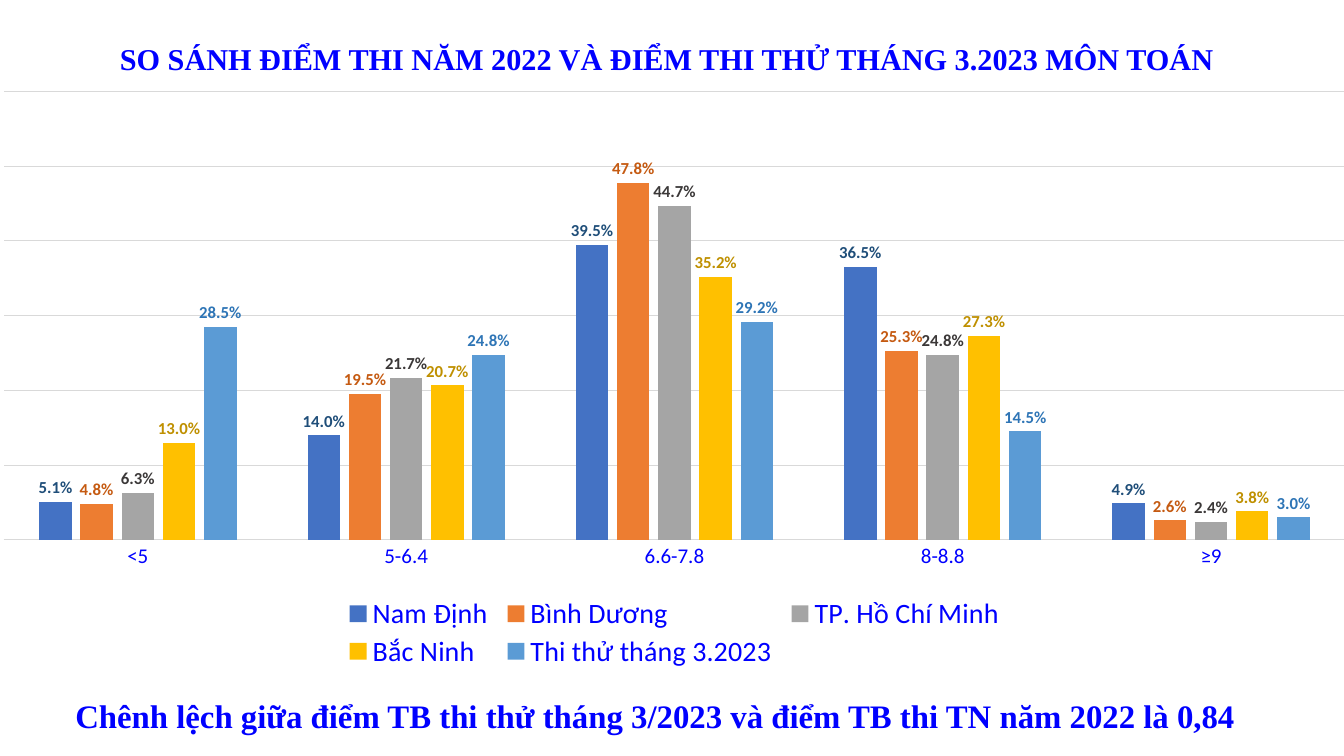
from lxml import etree
from pptx import Presentation
from pptx.chart.data import CategoryChartData
from pptx.dml.color import RGBColor
from pptx.enum.chart import XL_CHART_TYPE, XL_LABEL_POSITION, XL_LEGEND_POSITION, XL_TICK_MARK
from pptx.enum.text import MSO_ANCHOR, PP_ALIGN
from pptx.oxml.ns import qn
from pptx.util import Inches, Pt

COLUMNS = XL_CHART_TYPE.COLUMN_CLUSTERED
OUTSIDE_END = XL_LABEL_POSITION.OUTSIDE_END
BOTTOM = XL_LEGEND_POSITION.BOTTOM
NO_TICK = XL_TICK_MARK.NONE
MIDDLE = MSO_ANCHOR.MIDDLE
CENTER = PP_ALIGN.CENTER

COLORS = {"text": "0000FF", "grid": "D9D9D9", "base": "000000"}
PERCENT = "0.0%"
SCORE_BANDS = ["<5", "5-6.4", "6.6-7.8", "8-8.8", "≥9"]
# name, values, bar colour, label colour
SCORES = [
    ("Nam Định", [0.051, 0.14, 0.395, 0.365, 0.049], "4472C4", "1F4E79"),
    ("Bình Dương", [0.048, 0.195, 0.478, 0.253, 0.026], "ED7D31", "C55A11"),
    ("TP. Hồ Chí Minh", [0.063, 0.217, 0.447, 0.248, 0.024], "A5A5A5", "3B3838"),
    ("Bắc Ninh", [0.13, 0.207, 0.352, 0.273, 0.038], "FFC000", "BF9000"),
    ("Thi thử tháng 3.2023", [0.285, 0.248, 0.292, 0.145, 0.03], "5B9BD5", "2E75B6"),
]


def set_font(font, color, **formats):
    for name, value in formats.items():
        setattr(font, name, value)
    font.color.rgb = RGBColor.from_string(color)


def set_line(line):
    line.color.rgb = RGBColor.from_string(COLORS["grid"])
    line.width = Pt(0.75)


def add_heading(s, text, left, top, size):
    box = s.shapes.add_textbox(Inches(left), Inches(top), Inches(13.23), Inches(0.45))
    tf = box.text_frame
    tf.word_wrap = True
    tf.vertical_anchor = MIDDLE
    p = tf.paragraphs[0]
    p.alignment = CENTER
    p.line_spacing = 0.9
    r = p.add_run()
    r.text = text
    set_font(r.font, COLORS["text"], name="Times New Roman", size=Pt(size), bold=True)


def place(element, before, x, y, w, h, inner=False):
    """Give a chart part a fixed place, in fractions of the chart."""
    for old in element.findall(qn("c:layout")):
        element.remove(old)
    layout = etree.Element(qn("c:layout"))
    manual = etree.SubElement(layout, qn("c:manualLayout"))
    settings = [("layoutTarget", "inner")] if inner else []
    settings += [("xMode", "edge"), ("yMode", "edge"), ("x", x), ("y", y), ("w", w), ("h", h)]
    for tag, value in settings:
        etree.SubElement(manual, qn("c:" + tag)).set("val", str(value))
    element.find(qn(before)).addprevious(layout)


def style_axes(chart):
    axis = chart.category_axis
    axis.major_tick_mark = NO_TICK
    set_font(axis.tick_labels.font, COLORS["text"], name="Calibri", size=Pt(15))
    set_line(axis.format.line)
    scale = chart.value_axis
    scale.minimum_scale, scale.maximum_scale, scale.major_unit = 0, 0.6, 0.1
    scale.tick_labels.number_format = PERCENT
    scale.tick_labels.number_format_is_linked = False
    scale.has_major_gridlines = True
    set_line(scale.major_gridlines.format.line)
    scale.visible = False


def style_series(series, bar_color, label_color):
    series.invert_if_negative = False
    series.format.fill.solid()
    series.format.fill.fore_color.rgb = RGBColor.from_string(bar_color)
    labels = series.data_labels
    formats = {"show_value": True, "position": OUTSIDE_END,
               "number_format": PERCENT, "number_format_is_linked": False}
    for name, value in formats.items():
        setattr(labels, name, value)
    set_font(labels.font, label_color, name="Calibri", size=Pt(12), bold=True)


def add_score_chart(s):
    data = CategoryChartData(number_format=PERCENT)
    data.categories = SCORE_BANDS
    for name, values, _, _ in SCORES:
        data.add_series(name, values)
    chart = s.shapes.add_chart(COLUMNS, Inches(-0.24), Inches(0.79),
                               Inches(13.86), Inches(5.93), data).chart
    chart.has_title = False
    set_font(chart.font, COLORS["base"], name="Calibri", size=Pt(10))
    style_axes(chart)

    # Bars and their labels
    plot = chart.plots[0]
    plot.gap_width, plot.overlap, plot.vary_by_categories = 219, -27, False
    for series, (_, _, bar_color, label_color) in zip(plot.series, SCORES):
        style_series(series, bar_color, label_color)

    # Legend below the plot
    chart.has_legend = True
    legend = chart.legend
    legend.position = BOTTOM
    legend.include_in_layout = False
    set_font(legend.font, COLORS["text"], name="Calibri", size=Pt(20))
    plot_area = chart.element.find(".//" + qn("c:plotArea"))
    place(plot_area, "c:barChart", 0.02, 0.02, 0.96, 0.75, inner=True)
    place(chart.element.find(".//" + qn("c:legend")), "c:overlay", 0.26, 0.86, 0.48, 0.13)


def main():
    prs = Presentation()
    prs.slide_width, prs.slide_height = Inches(13.33), Inches(7.5)
    s = prs.slides.add_slide(prs.slide_layouts[6])
    add_heading(s, "SO SÁNH ĐIỂM THI NĂM 2022 VÀ ĐIỂM THI THỬ THÁNG 3.2023 MÔN TOÁN",
                0, 0.38, 21.6)
    add_heading(s, "Chênh lệch giữa điểm TB thi thử tháng 3/2023 và điểm TB thi TN năm 2022 là 0,84",
                -0.12, 6.9, 23.4)
    add_score_chart(s)
    prs.save("out.pptx")


if __name__ == "__main__":
    main()
